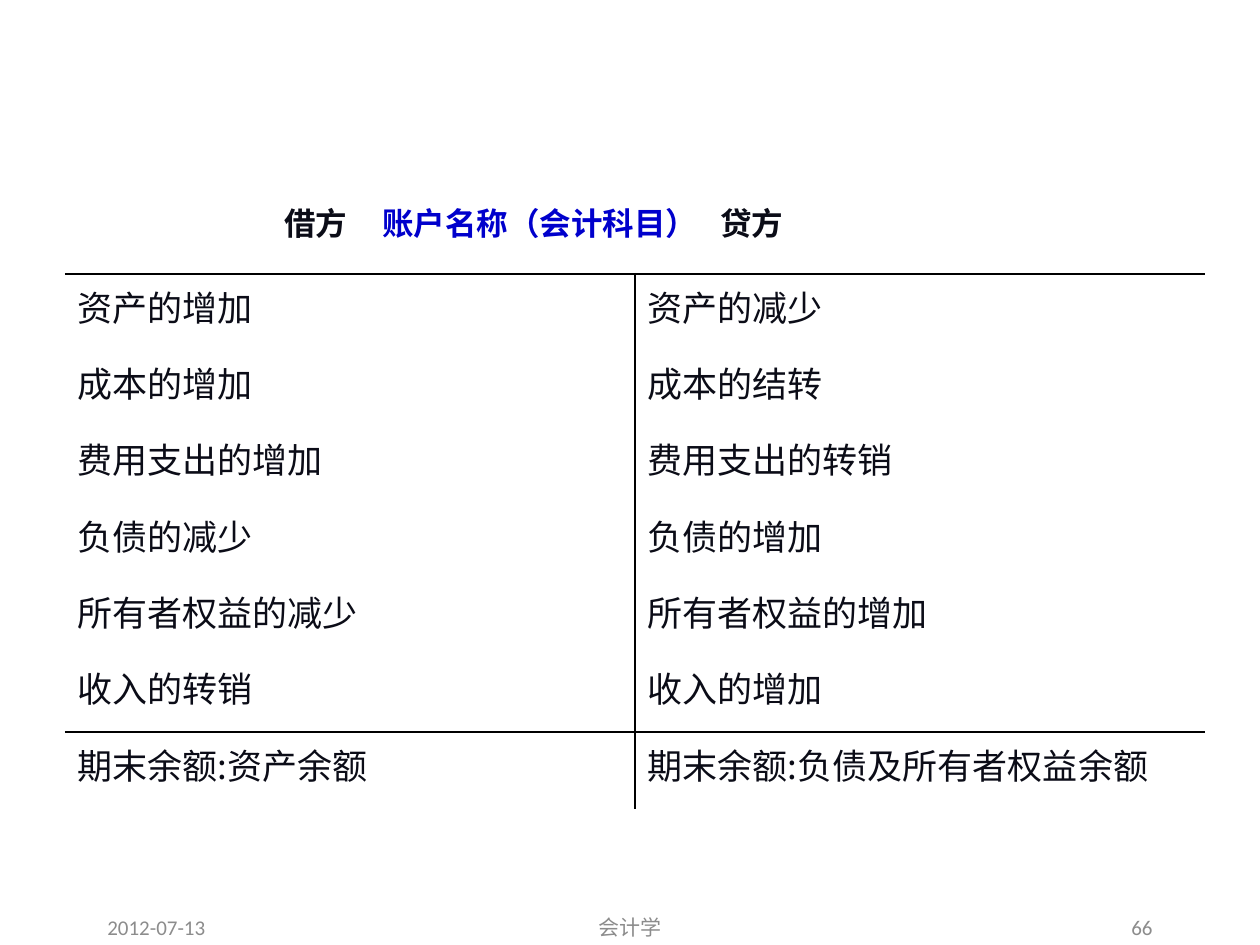
from lxml import etree
from pptx import Presentation
from pptx.dml.color import RGBColor
from pptx.enum.text import MSO_ANCHOR, PP_ALIGN
from pptx.oxml.ns import qn
from pptx.util import Emu, Pt

LEFT, CENTER, RIGHT = PP_ALIGN.LEFT, PP_ALIGN.CENTER, PP_ALIGN.RIGHT
JUSTIFY = PP_ALIGN.JUSTIFY
TOP, MIDDLE = MSO_ANCHOR.TOP, MSO_ANCHOR.MIDDLE

PX_PER_INCH = 126
COLORS = {"text": "0B0C17", "account": "0000CC", "footer": "8C8C8C", "rule": "000000"}
CJK_FONT = "Noto Sans CJK SC"
NO_STYLE_NO_GRID = "{2D5ABB26-0587-4C30-8999-92F81FD0307C}"

ENTRIES = [
    ("资产的增加", "资产的减少"),
    ("成本的增加", "成本的结转"),
    ("费用支出的增加", "费用支出的转销"),
    ("负债的减少", "负债的增加"),
    ("所有者权益的减少", "所有者权益的增加"),
    ("收入的转销", "收入的增加"),
    ("期末余额:资产余额", "期末余额:负债及所有者权益余额"),
]
HEADING = [("借方", "text"), ("\t账户名称（会计科目）", "account"), ("\t贷方", "text")]
HEADING_TABS = (98, 436)
FOOTERS = [
    ("2012-07-13", 95, 262, LEFT),
    ("会计学", 431, 399, CENTER),
    ("66", 903, 262, RIGHT),
]


def px(length):
    return Emu(round(length * 914400 / PX_PER_INCH))


def style_run(run, font, size, color, bold=False):
    run.font.name = font
    run.font.size = Pt(size)
    run.font.bold = bold
    run.font.color.rgb = RGBColor.from_string(COLORS[color])
    east_asian = etree.SubElement(run.font._element, qn("a:ea"))
    east_asian.set("typeface", CJK_FONT)


def add_text_box(slide, left, top, width, height, anchor):
    box = slide.shapes.add_textbox(px(left), px(top), px(width), px(height))
    box.text_frame.word_wrap = True
    box.text_frame.vertical_anchor = anchor
    return box.text_frame


def add_heading(slide):
    """Debit, account name and credit on one line, spaced by tab stops."""
    para = add_text_box(slide, 272, 198, 709, 63, TOP).paragraphs[0]
    tabs = etree.SubElement(para._p.get_or_add_pPr(), qn("a:tabLst"))
    for position in HEADING_TABS:
        etree.SubElement(tabs, qn("a:tab"), pos=str(px(position)), algn="l")
    for text, color in HEADING:
        run = para.add_run()
        run.text = text
        style_run(run, "Arial", 18, color, bold=True)


def add_footer(slide, text, left, width, alignment):
    para = add_text_box(slide, left, 914, width, 26, MIDDLE).paragraphs[0]
    para.text = text
    para.alignment = alignment
    style_run(para.runs[0], "Calibri", 12, "footer")


def set_borders(cell, sides):
    """Rule the given sides of a cell and clear the others."""
    properties = cell._tc.get_or_add_tcPr()
    for side in "LRTB":
        line = etree.SubElement(properties, qn(f"a:ln{side}"), w=str(Pt(1.5)))
        if side in sides:
            fill = etree.SubElement(line, qn("a:solidFill"))
            etree.SubElement(fill, qn("a:srgbClr"), val=COLORS["rule"])
        else:
            etree.SubElement(line, qn("a:noFill"))


def fill_cell(cell, text, sides):
    cell.text = text
    para = cell.text_frame.paragraphs[0]
    para.alignment = JUSTIFY
    para.space_before = Pt(4)
    style_run(para.runs[0], CJK_FONT, 20, "text")
    set_borders(cell, sides)
    cell.fill.background()


def add_account_table(slide):
    """T-account: a rule on top, one down the middle, one above the balance."""
    last = len(ENTRIES) - 1
    frame = slide.shapes.add_table(len(ENTRIES), 2, px(65), px(274), px(1140), px(535))
    table = frame.table
    table.first_row = table.horz_banding = False
    table._tbl.tblPr.find(qn("a:tableStyleId")).text = NO_STYLE_NO_GRID
    for row, entry in enumerate(ENTRIES):
        across = ("T" if row in (0, last) else "") + ("B" if row == last - 1 else "")
        for column, text in enumerate(entry):
            fill_cell(table.cell(row, column), text, "RL"[column] + across)


def main():
    deck = Presentation()
    deck.slide_width, deck.slide_height = px(1260), px(945)
    slide = deck.slides.add_slide(deck.slide_layouts[6])
    add_account_table(slide)
    for footer in FOOTERS:
        add_footer(slide, *footer)
    add_heading(slide)
    deck.save("out.pptx")


if __name__ == "__main__":
    main()
